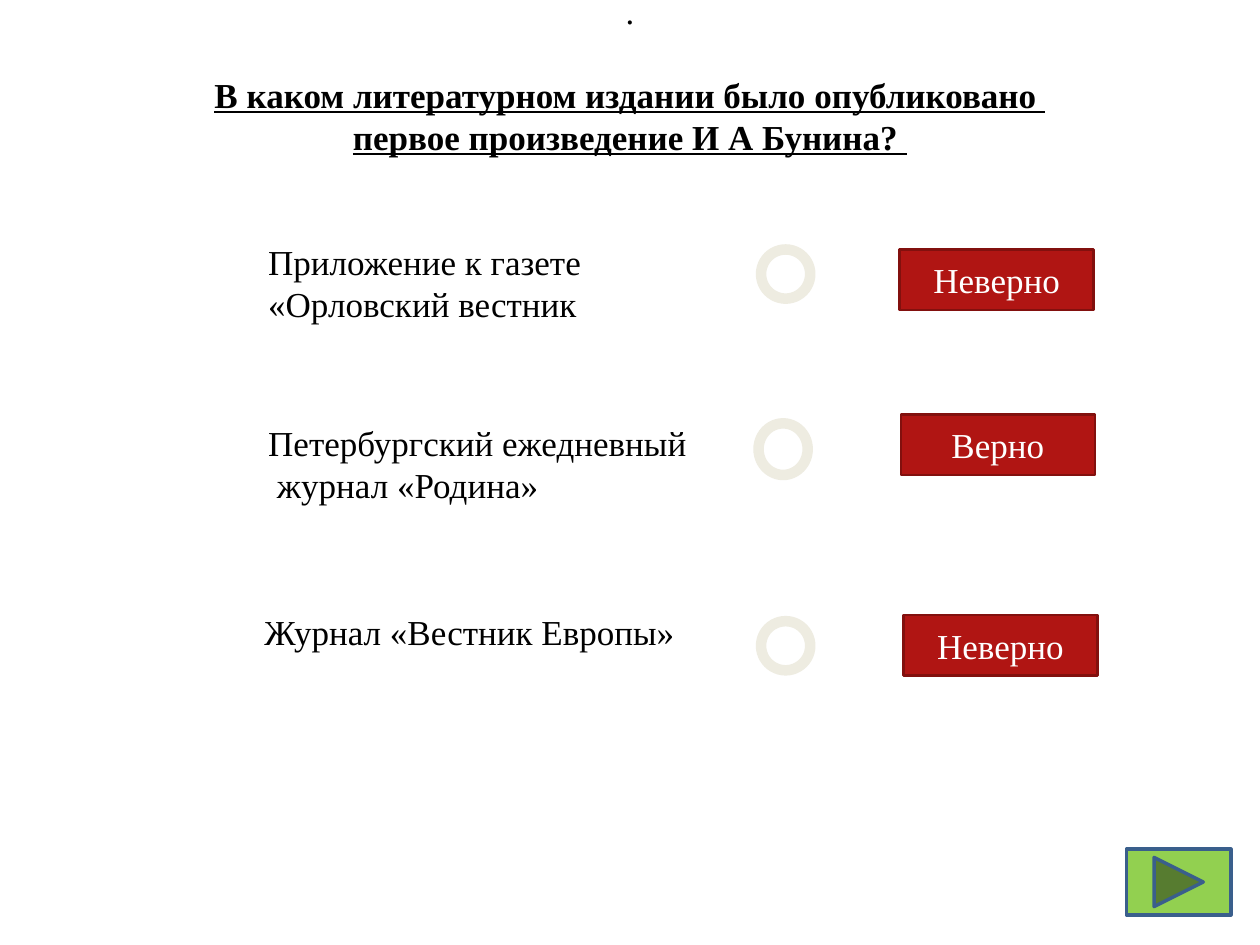
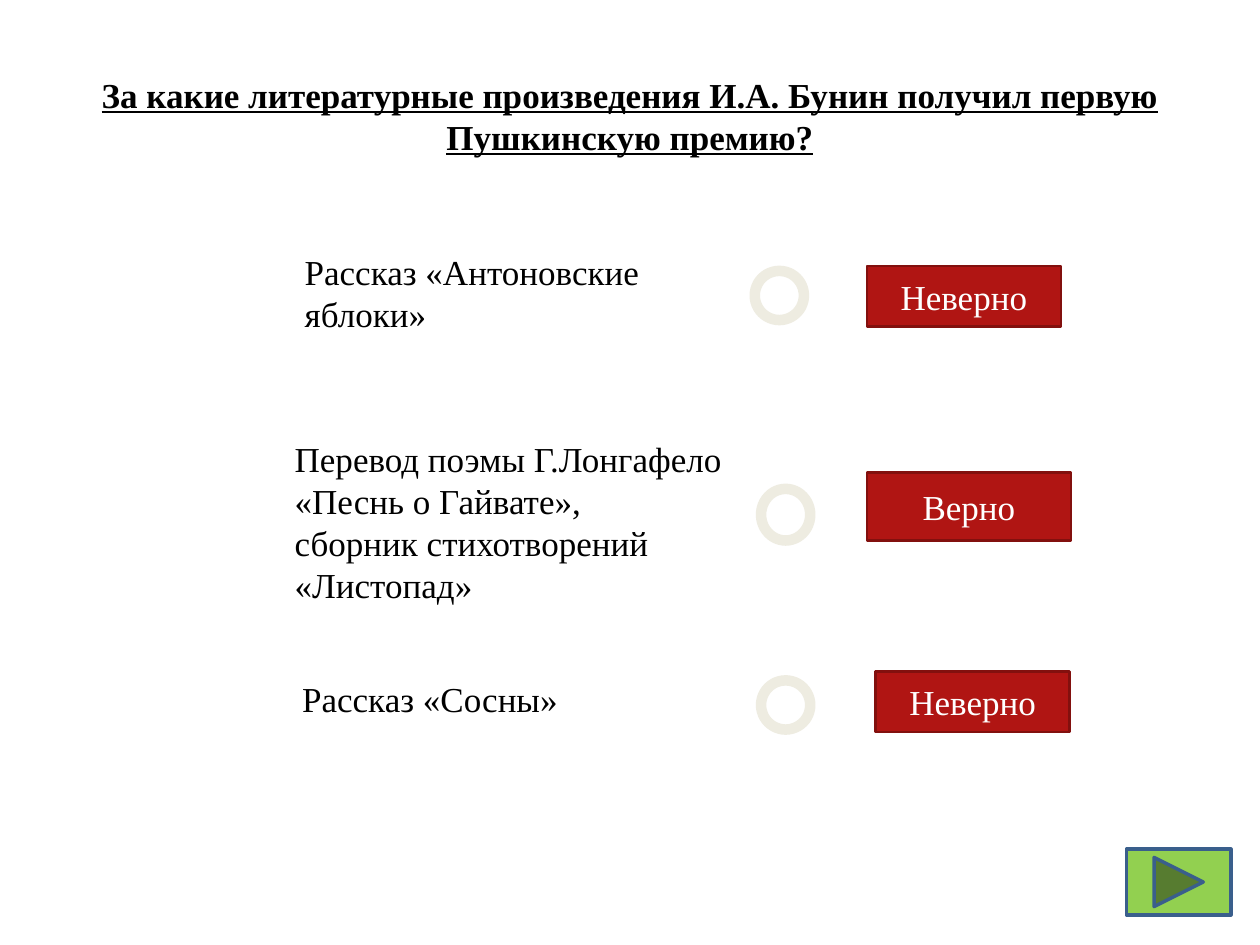
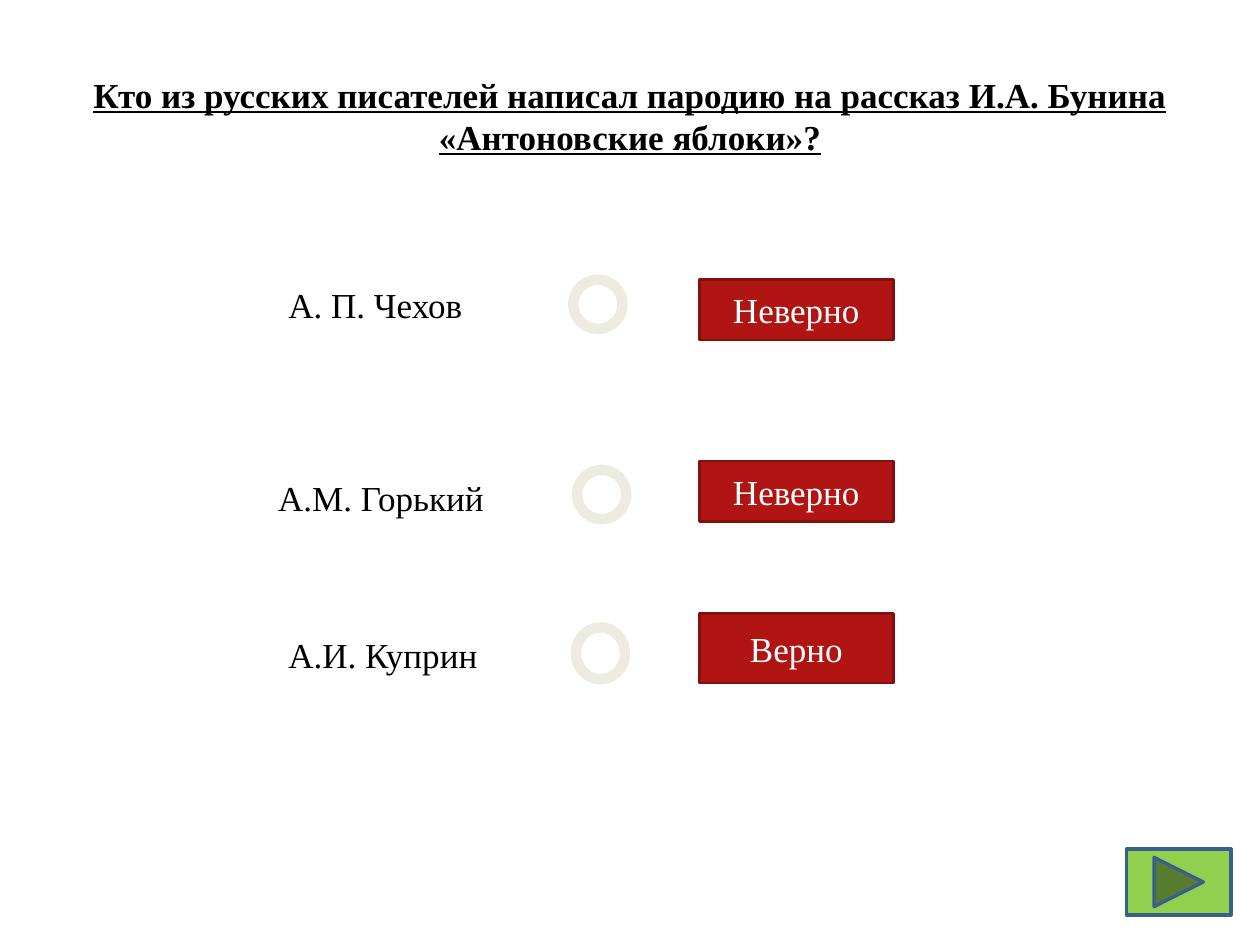
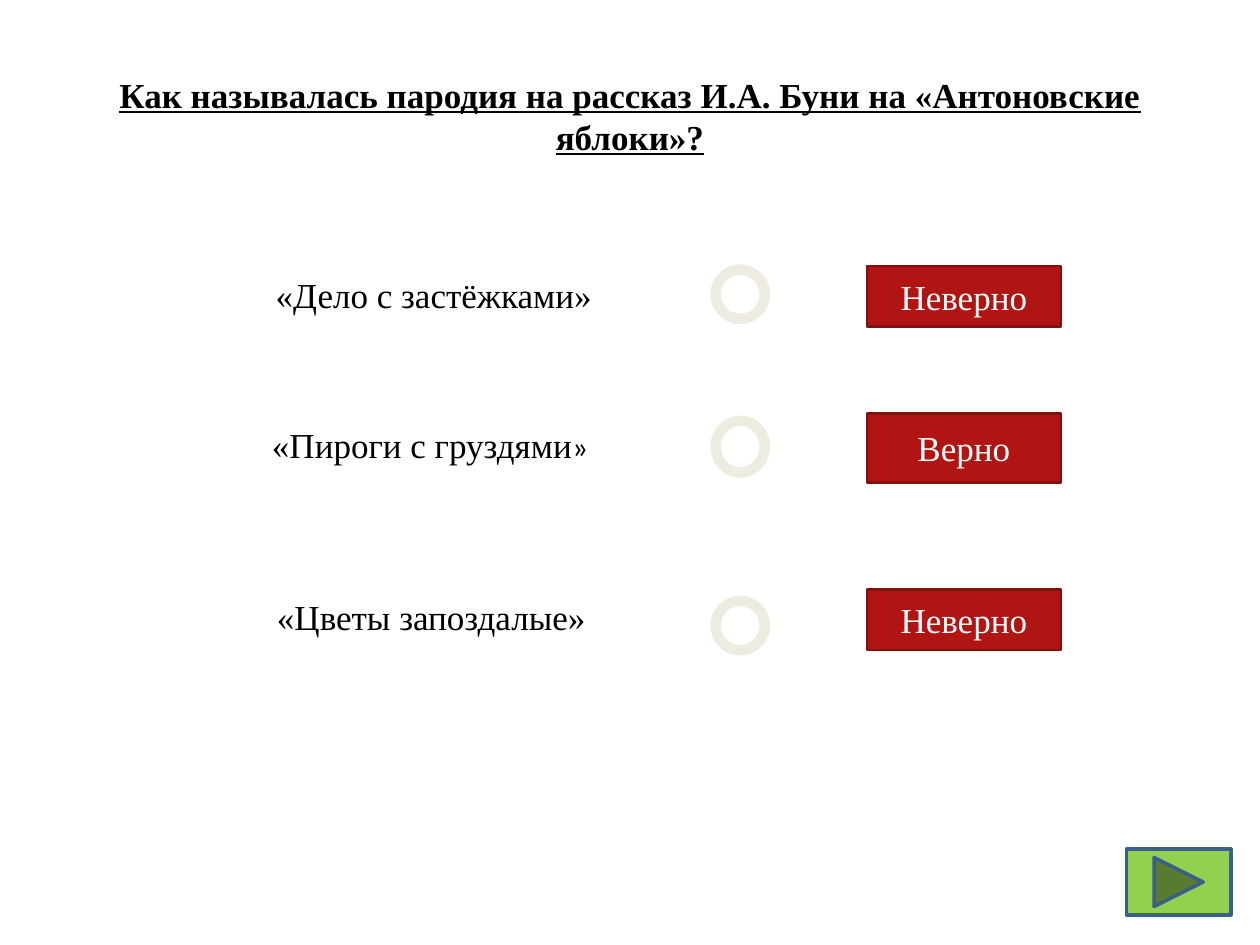
from pptx import Presentation
from pptx.dml.color import RGBColor
from pptx.enum.shapes import MSO_SHAPE
from pptx.enum.text import MSO_ANCHOR, PP_ALIGN
from pptx.util import Inches, Pt

BLACK, WHITE = "000000", "FFFFFF"
RED, MAROON = "B01513", "82100E"
GREEN, BLUE = "92D050", "3A5F8C"
CREAM = "EEECE1"
RIGHT, WRONG = "Верно", "Неверно"


def color(code):
    return RGBColor.from_string(code)


class Quiz:
    font = "Times New Roman"
    size = 20

    def __init__(self):
        self.deck = Presentation()
        self.deck.slide_width = Inches(10)
        self.deck.slide_height = Inches(7.5)
        self.slide = None

    def page(self):
        self.slide = self.deck.slides.add_slide(self.deck.slide_layouts[6])

    def run(self, para, text, ink=BLACK, bold=None, font=None, size=None):
        run = para.add_run()
        run.text = text
        run.font.name = font or self.font
        run.font.size = Pt(size or self.size)
        run.font.bold = run.font.underline = bold
        run.font.color.rgb = color(ink)

    def box(self, left, top, width, height):
        box = self.slide.shapes.add_textbox(*map(Inches, (left, top, width, height)))
        box.text_frame.word_wrap = True
        return box.text_frame

    def paras(self, frame, count):
        """Return the frame's paragraphs after extending them to count."""
        for _ in range(count - 1):
            frame.add_paragraph()
        return frame.paragraphs

    def title(self, lines, lead=None):
        """Write the question, with an optional plain line above it."""
        frame = self.box(0.5, 0.3, 9, 1.25)
        frame.vertical_anchor = MSO_ANCHOR.BOTTOM
        frame.margin_bottom = Inches(0.3)
        paras = list(self.paras(frame, len(lines) + bool(lead)))
        for para in paras:
            para.alignment = PP_ALIGN.CENTER
        if lead:
            self.run(paras.pop(0), lead, size=19.8)
            paras[0].space_before = Pt(24)
        for para, line in zip(paras, lines):
            self.run(para, line, bold=True)

    def label(self, lines, place):
        """Write an answer; a line is a text or a list of (text, style) runs."""
        frame = self.box(*place)
        for para, line in zip(self.paras(frame, len(lines)), lines):
            parts = [(line, {})] if isinstance(line, str) else line
            for text, style in parts:
                self.run(para, text, **style)

    def shape(self, kind, place, fill, line, weight):
        shape = self.slide.shapes.add_shape(kind, *map(Inches, place))
        shape.shadow.inherit = False
        shape.fill.solid()
        shape.fill.fore_color.rgb = color(fill)
        shape.line.color.rgb = color(line)
        shape.line.width = Pt(weight)
        return shape

    def button(self, text, left, top, width=1.54, height=0.48):
        place = (left, top, width, height)
        frame = self.shape(MSO_SHAPE.RECTANGLE, place, RED, MAROON, 1.5).text_frame
        frame.vertical_anchor = MSO_ANCHOR.MIDDLE
        para = frame.paragraphs[0]
        para.alignment = PP_ALIGN.CENTER
        self.run(para, text, WHITE)

    def ring(self, left, top, height):
        self.shape(MSO_SHAPE.OVAL, (left, top, 0.39, height), WHITE, CREAM, 6)

    def arrow(self):
        kind = MSO_SHAPE.ACTION_BUTTON_FORWARD_OR_NEXT
        self.shape(kind, (8.94, 6.74, 0.83, 0.52), GREEN, BLUE, 2)

    def ask(self, lines, answers, lead=None):
        self.page()
        self.title(lines, lead)
        for text, place, ring, verdict, button in answers:
            self.label(text, place)
            self.button(verdict, *button)
            self.ring(*ring, 0.41 if verdict == RIGHT else 0.39)
        self.arrow()


# Each answer: text lines, text place, ring place, verdict, button place
FIRST = [
    (["Приложение к газете ", "«Орловский вестник"],
     (2.03, 1.86, 3.6, 0.77), (6.04, 1.98), WRONG, (7.14, 1.98)),
    (["Петербургский ежедневный", " журнал «Родина»"],
     (2.03, 3.3, 5.08, 0.77), (6.02, 3.36), RIGHT, (7.15, 3.29)),
    (["Журнал «Вестник Европы»"],
     (2, 4.8, 3.6, 0.44), (6.04, 4.93), WRONG, (7.17, 4.88)),
]
PRIZE = [
    (["Рассказ «Антоновские яблоки»"],
     (2.32, 1.94, 3.67, 0.77), (5.99, 2.15), WRONG, (6.88, 2.11)),
    (["Перевод поэмы Г.Лонгафело «Песнь о Гайвате»,", "сборник стихотворений «Листопад»"],
     (2.24, 3.42, 3.75, 1.45), (6.04, 3.88), RIGHT, (6.88, 3.75, 1.62, 0.54)),
    (["Рассказ «Сосны»"],
     (2.3, 5.33, 3.2, 0.44), (6.04, 5.4), WRONG, (6.95, 5.33)),
]
AUTHOR = [
    (["А. П. Чехов"],
     (2.19, 2.2, 2.19, 0.44), (4.55, 2.22), WRONG, (5.55, 2.22)),
    (["А.М. Горький"],
     (2.11, 3.73, 2.27, 0.44), (4.58, 3.73), WRONG, (5.55, 3.66)),
    (["А.И. Куприн"],
     (2.19, 4.98, 2.19, 0.44), (4.57, 4.98), RIGHT, (5.55, 4.87, 1.54, 0.55)),
]
PARODY = [
    (["«Дело с застёжками»"],
     (2.09, 2.12, 3.13, 0.44), (5.68, 2.14), WRONG, (6.88, 2.11)),
    ([[("«Пироги с груздями", {}), ("»", {"font": "Calibri", "size": 18})]],
     (2.06, 3.31, 2.81, 0.44), (5.68, 3.34), RIGHT, (6.88, 3.28, 1.54, 0.55)),
    (["«Цветы запоздалые»"],
     (2.1, 4.68, 2.73, 0.44), (5.68, 4.77), WRONG, (6.88, 4.68)),
]


def main():
    quiz = Quiz()
    quiz.ask(["В каком литературном издании было опубликовано ",
              "первое произведение И А Бунина? "], FIRST, lead=".")
    quiz.ask(["За какие литературные произведения И.А. Бунин получил первую "
              "Пушкинскую премию?"], PRIZE)
    quiz.ask(["Кто из русских писателей написал пародию на рассказ И.А. Бунина "
              "«Антоновские яблоки»?"], AUTHOR)
    quiz.ask(["Как называлась пародия на рассказ И.А. Буни на «Антоновские "
              "яблоки»?"], PARODY)
    quiz.deck.save("out.pptx")


if __name__ == "__main__":
    main()
